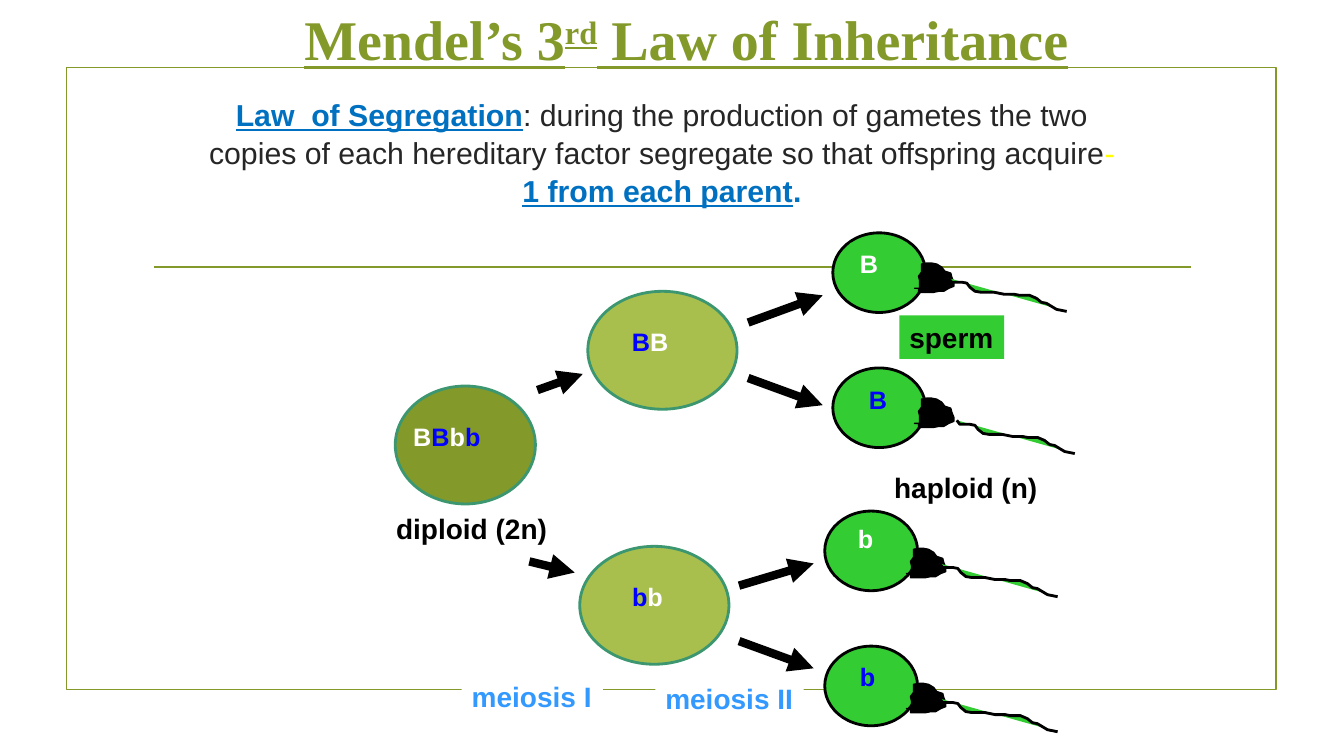
from pptx import Presentation
from pptx.dml.color import RGBColor
from pptx.enum.shapes import MSO_CONNECTOR, MSO_SHAPE
from pptx.enum.text import MSO_ANCHOR, MSO_AUTO_SIZE, PP_ALIGN
from pptx.oxml.ns import qn
from pptx.util import Inches, Pt
from lxml import etree

OLIVE = RGBColor(0x83, 0x99, 0x2A)
LIGHT_OLIVE = RGBColor(0xA8, 0xBF, 0x4D)
TEAL = RGBColor(0x3C, 0x97, 0x70)
GREEN = RGBColor(0x33, 0xCC, 0x33)
BLUE = RGBColor(0x00, 0x00, 0xFF)
SKY = RGBColor(0x33, 0x99, 0xFF)
LAW_BLUE = RGBColor(0x00, 0x70, 0xC0)
DARK = RGBColor(0x26, 0x26, 0x26)
YELLOW = RGBColor(0xFF, 0xFF, 0x00)
BLACK = RGBColor(0, 0, 0)
WHITE = RGBColor(0xFF, 0xFF, 0xFF)

# Runs: text, colour, bold, underline, superscript
HEADING = [("Mendel’s 3", OLIVE, True, True, False),
           ("rd", OLIVE, True, True, True),
           (" Law of Inheritance", OLIVE, True, True, False)]
LAW = [("Law  of Segregation", LAW_BLUE, True, True, False),
       (": during the production of gametes the two copies of each hereditary "
        "factor segregate so that offspring acquire", DARK, False, False, False),
       ("- ", YELLOW, False, False, False),
       ("1 from each parent", LAW_BLUE, True, True, False),
       (".", LAW_BLUE, True, False, False)]

# Parent cells: left, top, width, fill
CELL_HEIGHT = 1.17
CELLS = [(3.92, 3.83, 1.39, OLIVE),
         (5.75, 5.42, 1.48, LIGHT_OLIVE),
         (5.83, 2.89, 1.48, LIGHT_OLIVE)]

# Gene labels: left, top, width, fill, letters with colours
GENES = [(4, 4.13, 0.87, None, [("B", WHITE), ("B", BLUE), ("b", WHITE), ("b", BLUE)]),
         (6.17, 3.19, 0.56, LIGHT_OLIVE, [("B", BLUE), ("B", WHITE)]),
         (6.17, 5.72, 0.51, LIGHT_OLIVE, [("b", BLUE), ("b", WHITE)])]

# Captions: text, left, top, width, fill, colour
CAPTIONS = [("diploid (2n)", 3.83, 5.03, 1.71, None, BLACK),
            ("haploid (n)", 8.77, 4.62, 1.63, None, BLACK),
            ("sperm", 8.92, 3.13, 1.04, GREEN, BLACK),
            ("meiosis I", 4.58, 6.69, 1.4, WHITE, SKY),
            ("meiosis II", 6.5, 6.71, 1.47, WHITE, SKY)]

# Arrows: start x, start y, end x, end y
ARROWS = [(5.33, 3.87, 5.78, 3.71), (5.25, 5.57, 5.7, 5.68),
          (7.42, 3.2, 8.16, 2.93), (7.42, 3.75, 8.16, 4.02),
          (7.33, 5.81, 8.07, 5.59), (7.33, 6.36, 8.07, 6.63)]

# Sperm: letter, colour, letter width, then head, cap, tail and letter corners
SPERM = [("B", WHITE, 0.38, (8.26, 2.31), (9.07, 2.61), (9.41, 2.76), (8.43, 2.41)),
         ("B", BLUE, 0.38, (8.26, 3.65), (9.07, 3.95), (9.49, 4.17), (8.52, 3.76)),
         ("b", WHITE, 0.35, (8.18, 5.07), (8.99, 5.44), (9.32, 5.59), (8.41, 5.14)),
         ("b", BLUE, 0.35, (8.18, 6.41), (8.99, 6.78), (9.32, 6.93), (8.43, 6.51))]

# Outlines in hundredths of an inch from their corner
CAP = [(0, 25), (5, 25), (5, 21), (5, 17), (4, 13), (7, 9), (7, 5), (7, 1), (12, 0),
       (17, 0), (22, 1), (27, 4), (30, 8), (36, 10), (37, 14), (39, 19), (39, 23),
       (34, 25), (29, 28), (24, 28), (19, 29), (14, 29), (9, 29), (4, 29), (4, 25)]
TAIL = [(0, 0), (3, 4), (8, 4), (13, 4), (18, 5), (21, 9), (26, 13), (32, 14),
        (45, 14), (55, 16), (65, 16), (70, 17), (80, 17), (87, 20), (92, 24),
        (97, 25), (102, 28), (107, 31), (112, 32), (117, 33)]

deck = Presentation()
deck.slide_width, deck.slide_height = Inches(13.33), Inches(7.5)
page = deck.slides.add_slide(deck.slide_layouts[5])


def paint(shape, fill, line=None, weight=1):
    shape.shadow.inherit = False
    if fill is None:
        shape.fill.background()
    else:
        shape.fill.solid()
        shape.fill.fore_color.rgb = fill
    if line is None:
        shape.line.fill.background()
    else:
        shape.line.color.rgb = line
        shape.line.width = Pt(weight)


def add_preset(kind, left, top, width, height, fill, line, weight):
    shape = page.shapes.add_shape(kind, Inches(left), Inches(top), Inches(width), Inches(height))
    paint(shape, fill, line, weight)


def add_outline(points, corner, fill, weight, close):
    builder = page.shapes.build_freeform(*points[0], scale=Inches(0.01))
    builder.add_line_segments(points[1:], close=close)
    shape = builder.convert_to_shape(Inches(corner[0]), Inches(corner[1]))
    paint(shape, fill, BLACK, weight)


def add_line(x1, y1, x2, y2, color, weight, arrow=False):
    line = page.shapes.add_connector(MSO_CONNECTOR.STRAIGHT, Inches(x1), Inches(y1),
                                     Inches(x2), Inches(y2))
    line.line.color.rgb = color
    line.line.width = Pt(weight)
    if arrow:
        etree.SubElement(line.line._get_or_add_ln(), qn("a:tailEnd"), type="triangle")
    etree.SubElement(line._element.spPr, qn("a:effectLst"))


def write(para, text, size, color, font="Arial", bold=True, underline=False, raised=False):
    span = para.add_run()
    span.text = text
    span.font.name, span.font.size = font, Pt(size)
    span.font.bold, span.font.underline = bold, underline
    span.font.color.rgb = color
    if raised:
        span.font._element.set("baseline", "30000")


def add_label(left, top, width, height, fill, size, letters):
    box = page.shapes.add_textbox(Inches(left), Inches(top), Inches(width), Inches(height))
    if fill is not None:
        box.fill.solid()
        box.fill.fore_color.rgb = fill
    box.text_frame.word_wrap = False
    for text, color in letters:
        write(box.text_frame.paragraphs[0], text, size, color)


# Frame and rule
add_preset(MSO_SHAPE.RECTANGLE, 0.66, 0.67, 12, 6.17, None, OLIVE, 1.25)
add_line(1.53, 2.65, 11.81, 2.65, OLIVE, 1.25)

# Statement of the law
title = page.shapes.title
title.left, title.top = Inches(1.88), Inches(0.92)
title.width, title.height = Inches(9.37), Inches(1.17)
frame = title.text_frame
frame.word_wrap, frame.auto_size = True, MSO_AUTO_SIZE.NONE
frame.vertical_anchor = MSO_ANCHOR.MIDDLE
law = frame.paragraphs[0]
law.alignment, law.line_spacing = PP_ALIGN.CENTER, 1.05
for text, color, bold, underline, raised in LAW:
    write(law, text, 21.6, color, bold=bold, underline=underline, raised=raised)

# Parent cells and arrows
for left, top, width, fill in CELLS:
    add_preset(MSO_SHAPE.OVAL, left, top, width, CELL_HEIGHT, fill, TEAL, 2)
for left, top, width, fill, letters in GENES:
    add_label(left, top, width, 0.4, fill, 18, letters)
for ends in ARROWS:
    add_line(*ends, BLACK, 6, arrow=True)

# Captions
for text, left, top, width, fill, color in CAPTIONS:
    add_label(left, top, width, 0.43, fill, 20, [(text, color)])

# Sperm
for letter, color, width, head, cap, tail, corner in SPERM:
    add_preset(MSO_SHAPE.OVAL, *head, 0.92, 0.79, GREEN, BLACK, 2)
    add_outline(CAP, cap, BLACK, 1, close=True)
    add_outline(TAIL, tail, GREEN, 2, close=False)
    add_label(*corner, width, 0.4, GREEN, 18, [(letter, color)])

# Heading
box = page.shapes.add_textbox(Inches(2.92), Inches(0), Inches(8.47), Inches(0.77))
box.text_frame.word_wrap = True
for text, color, bold, underline, raised in HEADING:
    write(box.text_frame.paragraphs[0], text, 40, color, font="Times New Roman",
          bold=bold, underline=underline, raised=raised)

deck.save("out.pptx")
